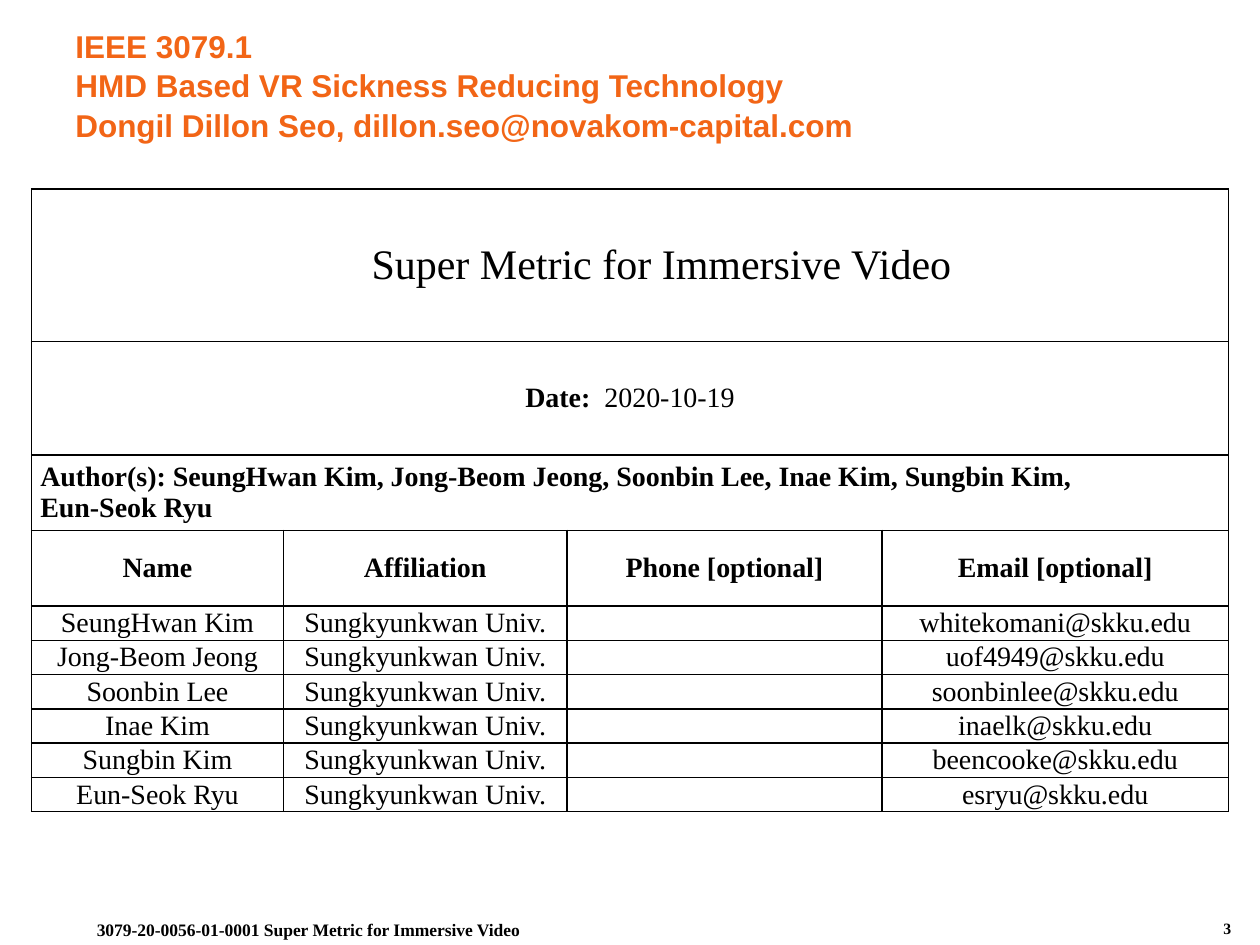
from lxml import etree
from pptx import Presentation
from pptx.dml.color import RGBColor
from pptx.enum.text import MSO_ANCHOR, PP_ALIGN
from pptx.oxml.ns import qn
from pptx.util import Inches, Pt

LEFT, CENTER, RIGHT = PP_ALIGN.LEFT, PP_ALIGN.CENTER, PP_ALIGN.RIGHT
MIDDLE = MSO_ANCHOR.MIDDLE
COLORS = {"black": "000000", "orange": "F26516"}


def write(p, text, size=16, bold=False, font="Times New Roman", color="black", align=CENTER):
    """Append formatted text to p; a vertical tab in it is a line break."""
    p.alignment = align
    for i, line in enumerate(text.split("\v")):
        if i:
            p.add_line_break()
        r = p.add_run()
        r.text = line
        r.font.size = Pt(size)
        r.font.bold = bold
        r.font.name = font
        r.font.color.rgb = RGBColor.from_string(COLORS[color])


def add_border(cell):
    tcPr = cell._tc.get_or_add_tcPr()
    for i, side in enumerate(("lnL", "lnR", "lnT", "lnB")):
        ln = etree.Element(qn(f"a:{side}"), w=str(Pt(1)))
        fill = etree.SubElement(ln, qn("a:solidFill"))
        etree.SubElement(fill, qn("a:srgbClr"), val=COLORS["black"])
        tcPr.insert(i, ln)


prs = Presentation()
prs.slide_width, prs.slide_height = Inches(10), Inches(7.5)
s = prs.slides.add_slide(prs.slide_layouts[6])

# Author table
col_widths = [2, 2.25, 2.5, 2.75]
row_heights = [1.21, 0.9, 0.6, 0.6] + [0.25] * 6
authors = [
    ("SeungHwan Kim", "whitekomani"),
    ("Jong-Beom Jeong", "uof4949"),
    ("Soonbin Lee", "soonbinlee"),
    ("Inae Kim", "inaelk"),
    ("Sungbin Kim", "beencooke"),
    ("Eun-Seok Ryu", "esryu"),
]
table = s.shapes.add_table(len(row_heights), len(col_widths), Inches(0.25), Inches(1.5),
                           Inches(sum(col_widths)), Inches(sum(row_heights))).table
table.first_row = table.horz_banding = False
for col, width in zip(table.columns, col_widths):
    col.width = Inches(width)
for row, height in zip(table.rows, row_heights):
    row.height = Inches(height)
    for cell in row.cells:
        cell.fill.background()
        cell.vertical_anchor = MIDDLE
        cell.margin_left = cell.margin_right = Inches(0.07)
        cell.margin_top = cell.margin_bottom = 0
        add_border(cell)
for i in range(3):
    table.cell(i, 0).merge(table.cell(i, 3))

p = table.cell(0, 0).text_frame.paragraphs[0]
write(p, "Super Metric for Immersive Video", size=24)
p.space_after = Pt(12)
p._p.get_or_add_pPr().set("marL", str(Inches(0.5)))

p = table.cell(1, 0).text_frame.paragraphs[0]
write(p, "Date: ", bold=True)
write(p, " 2020-10-19")
p.space_after = Pt(12)

tf = table.cell(2, 0).text_frame
write(tf.paragraphs[0], "Author(s): SeungHwan Kim, Jong-Beom Jeong, Soonbin Lee, Inae Kim, Sungbin Kim,",
      bold=True, align=LEFT)
write(tf.add_paragraph(), "Eun-Seok Ryu", bold=True, align=LEFT)

rows = [("Name", "Affiliation", "Phone [optional]", "Email [optional]")]
rows += [(name, "Sungkyunkwan Univ.", "", f"{user}@skku.edu") for name, user in authors]
for i, values in enumerate(rows):
    for j, text in enumerate(values):
        p = table.cell(i + 3, j).text_frame.paragraphs[0]
        if text:
            write(p, text, bold=i == 0)
        else:
            # An empty cell keeps the row low only with the size of its neighbours
            etree.SubElement(p._p, qn("a:endParaRPr"), sz="1600")

# Title, footer and page number
title = ("IEEE 3079.1\vHMD Based VR Sickness Reducing Technology\v"
         "Dongil Dillon Seo, dillon.seo@novakom-capital.com")
boxes = [
    ((8.25, 7.23, 1.62, 0.27), "3", 1, dict(size=9, align=RIGHT)),
    ((0.5, 0.17, 9, 1), title, 1.05, dict(size=18, font="Arial", color="orange", align=LEFT)),
    ((0.67, 7.25, 7.96, 0.25), "3079-20-0056-01-0001 Super Metric for Immersive Video", 1,
     dict(size=10, align=LEFT)),
]
for position, text, spacing, style in boxes:
    tf = s.shapes.add_textbox(*map(Inches, position)).text_frame
    tf.word_wrap = True
    tf.vertical_anchor = MIDDLE
    p = tf.paragraphs[0]
    write(p, text, bold=True, **style)
    p.line_spacing = spacing

prs.save("out.pptx")
